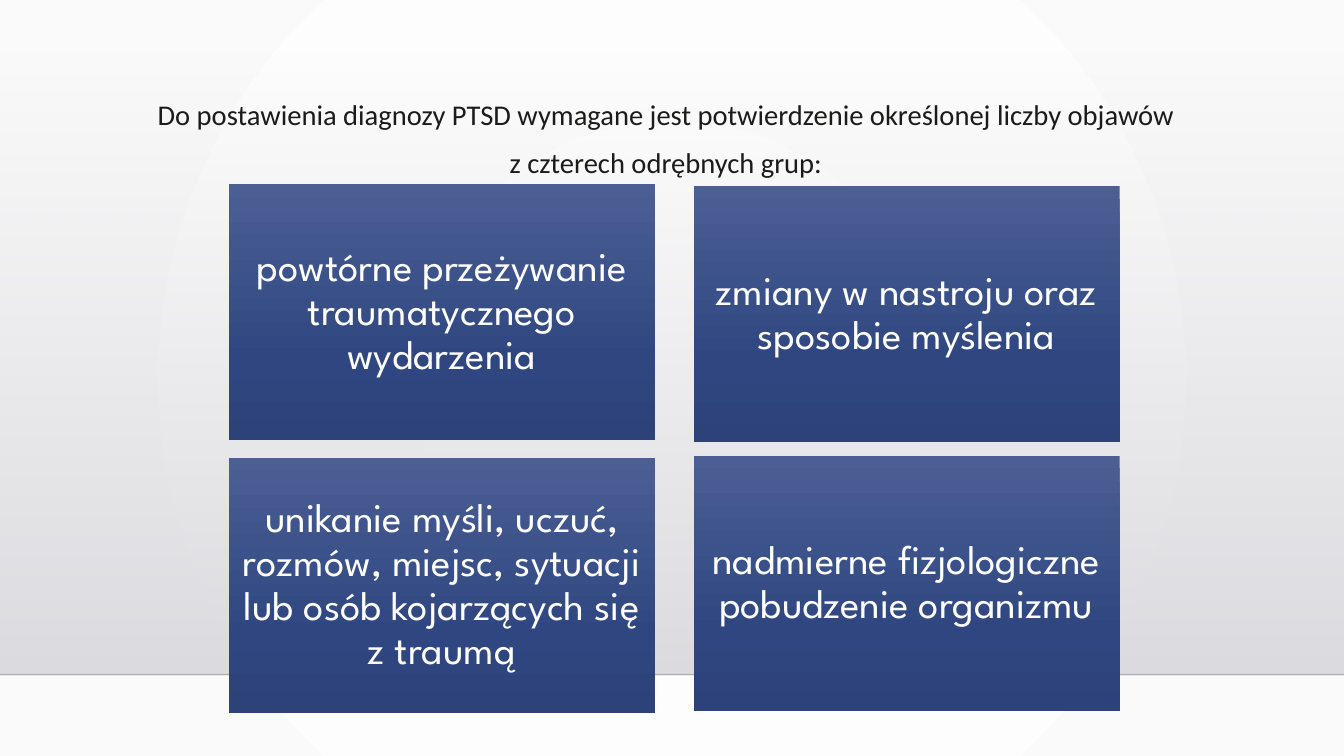
from lxml.etree import SubElement
from pptx import Presentation
from pptx.dml.color import RGBColor
from pptx.enum.shapes import MSO_CONNECTOR as Connector
from pptx.enum.shapes import MSO_SHAPE as Shape
from pptx.enum.text import MSO_ANCHOR as Anchor
from pptx.enum.text import PP_ALIGN as Align
from pptx.oxml.ns import qn
from pptx.util import Cm, Pt

WHITE = RGBColor(0xFF, 0xFF, 0xFF)
OFF_WHITE = RGBColor(0xFA, 0xFA, 0xFA)
MIST = RGBColor(0xDC, 0xDC, 0xE0)
MIST_DEEP = RGBColor(0xDE, 0xDE, 0xE2)
INK = RGBColor(0x1B, 0x1B, 0x1A)
BLACK = RGBColor(0x00, 0x00, 0x01)
BLUE_LIGHT = RGBColor(0x4C, 0x5F, 0x95)
BLUE = RGBColor(0x2F, 0x46, 0x80)
BLUE_DARK = RGBColor(0x2D, 0x42, 0x79)

PAGE_WIDTH, PAGE_HEIGHT = 33.87, 19.05
HORIZON = 17.0
TILE_WIDTH, TILE_HEIGHT = 10.74, 6.45

INTRO = [
    "Do postawienia diagnozy PTSD wymagane jest potwierdzenie określonej liczby objawów",
    "z czterech odrębnych grup:",
]
# Each column: left edge, top of its first tile, step to the next tile, texts
COLUMNS = [
    (5.77, 4.65, 6.88, [
        "powtórne przeżywanie traumatycznego wydarzenia",
        "unikanie myśli, uczuć, rozmów, miejsc, sytuacji lub osób kojarzących się z traumą",
    ]),
    (17.48, 4.7, 6.78, [
        "zmiany w nastroju oraz sposobie myślenia",
        "nadmierne fizjologiczne pobudzenie organizmu",
    ]),
]


def set_gradient(fill, owner, stops, circle=False):
    """Fill with (percent, colour, opacity) stops, downwards or from the centre."""
    fill.gradient()
    gradient = owner.find(".//" + qn("a:gradFill"))
    for child in list(gradient):
        gradient.remove(child)
    stop_list = SubElement(gradient, qn("a:gsLst"))
    for percent, color, opacity in stops:
        stop = SubElement(stop_list, qn("a:gs"), pos=str(percent * 1000))
        tint = SubElement(stop, qn("a:srgbClr"), val=str(color))
        if opacity < 100:
            SubElement(tint, qn("a:alpha"), val=str(opacity * 1000))
    if circle:
        route = SubElement(gradient, qn("a:path"), path="circle")
        SubElement(route, qn("a:fillToRect"), l="50000", t="50000", r="50000", b="50000")
    else:
        SubElement(gradient, qn("a:lin"), ang="5400000", scaled="0")


def write_text(frame, lines, font, size, color, anchor=Anchor.TOP,
               line_spacing=None, gap=0, margin=None):
    frame.word_wrap = True
    frame.vertical_anchor = anchor
    if margin is not None:
        frame.margin_left = frame.margin_right = Cm(margin)
        frame.margin_top = frame.margin_bottom = Cm(margin)
    for index, line in enumerate(lines):
        para = frame.add_paragraph() if index else frame.paragraphs[0]
        para.alignment = Align.CENTER
        if line_spacing:
            para.line_spacing = line_spacing
        if index:
            para.space_before = Pt(gap)
        span = para.add_run()
        span.text = line
        span.font.name = font
        span.font.size = Pt(size)
        span.font.color.rgb = color


def add_panel(page, left, top, width, height, stops):
    box = page.shapes.add_shape(Shape.RECTANGLE, Cm(left), Cm(top), Cm(width), Cm(height))
    box.shadow.inherit = False
    box.line.fill.background()
    set_gradient(box.fill, box._element, stops)
    return box


def add_horizon(page):
    line = page.shapes.add_connector(
        Connector.STRAIGHT, Cm(0), Cm(HORIZON), Cm(PAGE_WIDTH), Cm(HORIZON))
    line.line.width = Pt(1)
    line.line.color.rgb = BLACK
    tint = line._element.spPr.find(".//" + qn("a:srgbClr"))
    SubElement(tint, qn("a:alpha"), val="20000")
    SubElement(line._element.spPr, qn("a:effectLst"))


def add_tile(page, left, top, text):
    box = add_panel(page, left, top, TILE_WIDTH, TILE_HEIGHT,
                    [(0, BLUE_LIGHT, 100), (69, BLUE, 100), (100, BLUE_DARK, 100)])
    write_text(box.text_frame, [text], font="League Spartan", size=29, color=WHITE,
               anchor=Anchor.MIDDLE, line_spacing=0.9, margin=0.3)


def main():
    deck = Presentation()
    deck.slide_width, deck.slide_height = Cm(PAGE_WIDTH), Cm(PAGE_HEIGHT)
    page = deck.slides.add_slide(deck.slide_layouts[6])

    # Backdrop: soft glow, wall and horizon
    set_gradient(page.background.fill, page._element,
                 [(0, WHITE, 100), (100, OFF_WHITE, 100)], circle=True)
    add_panel(page, 0, 1.3, PAGE_WIDTH, HORIZON - 1.3,
              [(0, MIST, 0), (100, MIST_DEEP, 100)])
    add_horizon(page)

    # Introduction
    box = page.shapes.add_textbox(Cm(0.69), Cm(2.31), Cm(32.18), Cm(2.36))
    write_text(box.text_frame, INTRO, font="Calibri", size=20.4, color=INK, gap=10)

    # Four symptom groups
    for left, top, step, texts in COLUMNS:
        for row, text in enumerate(texts):
            add_tile(page, left, top + row * step, text)

    deck.save("out.pptx")


if __name__ == "__main__":
    main()
